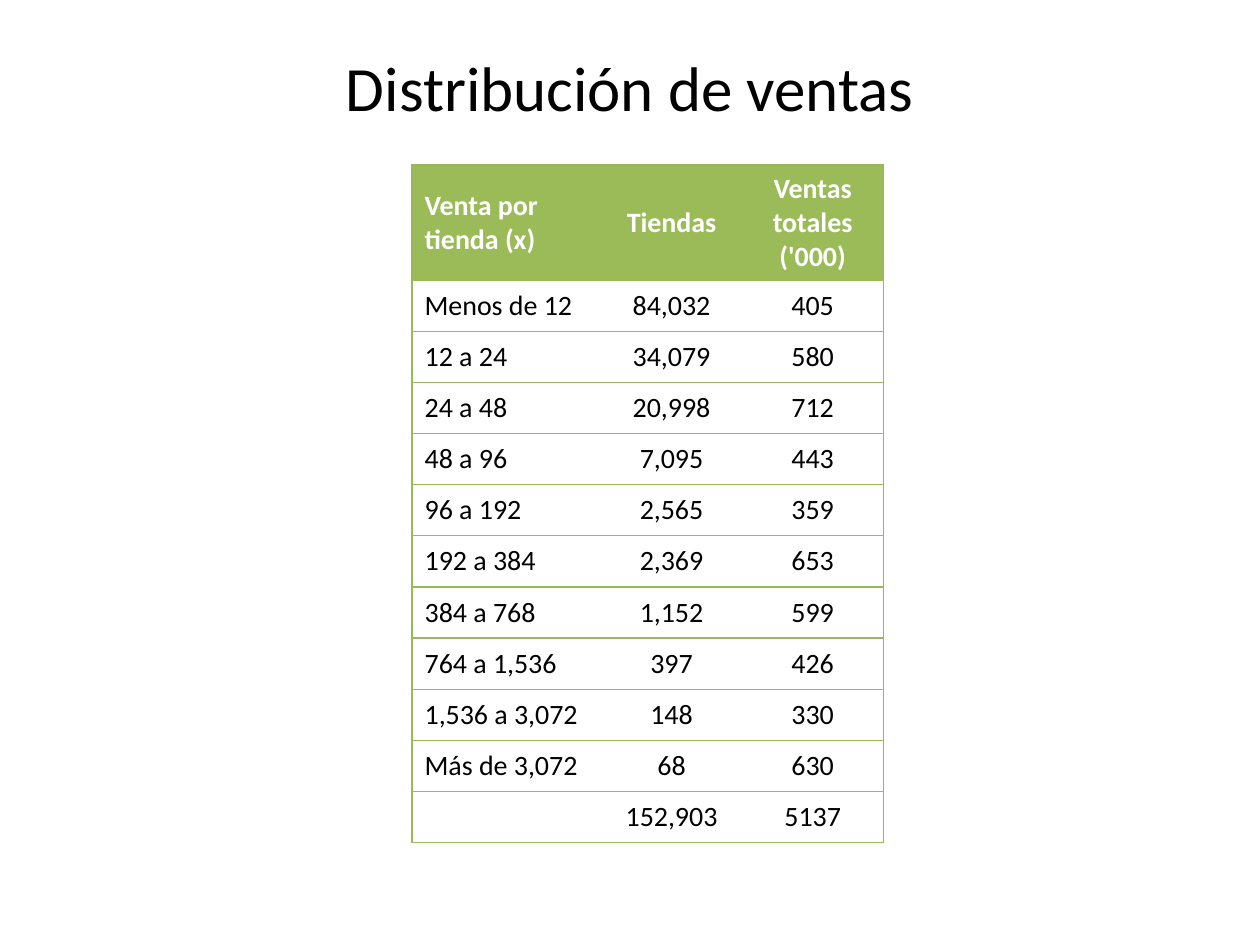
from lxml import etree
from pptx import Presentation
from pptx.dml.color import RGBColor
from pptx.enum.text import MSO_ANCHOR, PP_ALIGN
from pptx.oxml.ns import qn
from pptx.util import Inches, Pt

LEFT, CENTER = PP_ALIGN.LEFT, PP_ALIGN.CENTER
MIDDLE = MSO_ANCHOR.MIDDLE
TITLE_ONLY = 5
FONT = "Calibri"
COLORS = {"text": "000000", "header_text": "FFFFFF", "header": "9BBB59", "line": "98B955"}
PLAIN_TABLE_STYLE = "{2D5ABB26-0587-4C30-8999-92F81FD0307C}"

COLUMN_WIDTHS = (1.5, 1.12, 1.12)
ROW_HEIGHT = Pt(29.2)
SALES = [
    ("Venta por tienda (x)", "Tiendas", "Ventas totales ('000)"),
    ("Menos de 12", "84,032", "405"),
    ("12 a 24", "34,079", "580"),
    ("24 a 48", "20,998", "712"),
    ("48 a 96", "7,095", "443"),
    ("96 a 192", "2,565", "359"),
    ("192 a 384", "2,369", "653"),
    ("384 a 768", "1,152", "599"),
    ("764 a 1,536", "397", "426"),
    ("1,536 a 3,072", "148", "330"),
    ("Más de 3,072", "68", "630"),
    ("", "152,903", "5137"),
]


def format_paragraph(para, size, color, align, bold=False):
    para.alignment = align
    para.font.name = FONT
    para.font.size = Pt(size)
    para.font.bold = bold
    para.font.color.rgb = RGBColor.from_string(COLORS[color])


def add_title(page, text):
    title = page.shapes.title
    title.left, title.top = Inches(0.5), Inches(0.3)
    title.width, title.height = Inches(9), Inches(0.77)
    title.text_frame.text = text
    title.text_frame.vertical_anchor = MIDDLE
    format_paragraph(title.text_frame.paragraphs[0], 36, "text", CENTER)


def set_borders(cell, sides):
    properties = cell._tc.get_or_add_tcPr()
    for side in sides:
        line = etree.SubElement(properties, qn(f"a:ln{side}"), w=str(Pt(0.75)))
        fill = etree.SubElement(line, qn("a:solidFill"))
        etree.SubElement(fill, qn("a:srgbClr"), val=COLORS["line"])


def format_cell(cell, text, row, column):
    is_header = row == 0
    cell.text = text
    cell.vertical_anchor = MIDDLE
    format_paragraph(cell.text_frame.paragraphs[0], 16,
                     "header_text" if is_header else "text",
                     CENTER if column else LEFT, is_header)
    # Outer frame and row rules, without inner vertical lines
    outer_side = {0: "L", len(COLUMN_WIDTHS) - 1: "R"}.get(column, "")
    set_borders(cell, outer_side + "TB")
    if is_header:
        cell.fill.solid()
        cell.fill.fore_color.rgb = RGBColor.from_string(COLORS["header"])
    else:
        cell.fill.background()


def add_sales_table(page):
    height = Inches(5.36)
    frame = page.shapes.add_table(len(SALES), len(COLUMN_WIDTHS), Inches(3.27),
                                  Inches(1.31), Inches(sum(COLUMN_WIDTHS)), height)
    table = frame.table
    table._tbl.tblPr.find(qn("a:tableStyleId")).text = PLAIN_TABLE_STYLE
    table.horz_banding = False
    for column, width in zip(table.columns, COLUMN_WIDTHS):
        column.width = Inches(width)
    for row, values in enumerate(SALES):
        table.rows[row].height = ROW_HEIGHT
        for column, text in enumerate(values):
            format_cell(table.cell(row, column), text, row, column)
    # The header grows to its three lines of text
    frame.height = height


def main():
    deck = Presentation()
    deck.slide_width, deck.slide_height = Inches(10), Inches(7.5)
    page = deck.slides.add_slide(deck.slide_layouts[TITLE_ONLY])
    add_title(page, "Distribución de ventas")
    add_sales_table(page)
    deck.save("out.pptx")


if __name__ == "__main__":
    main()
